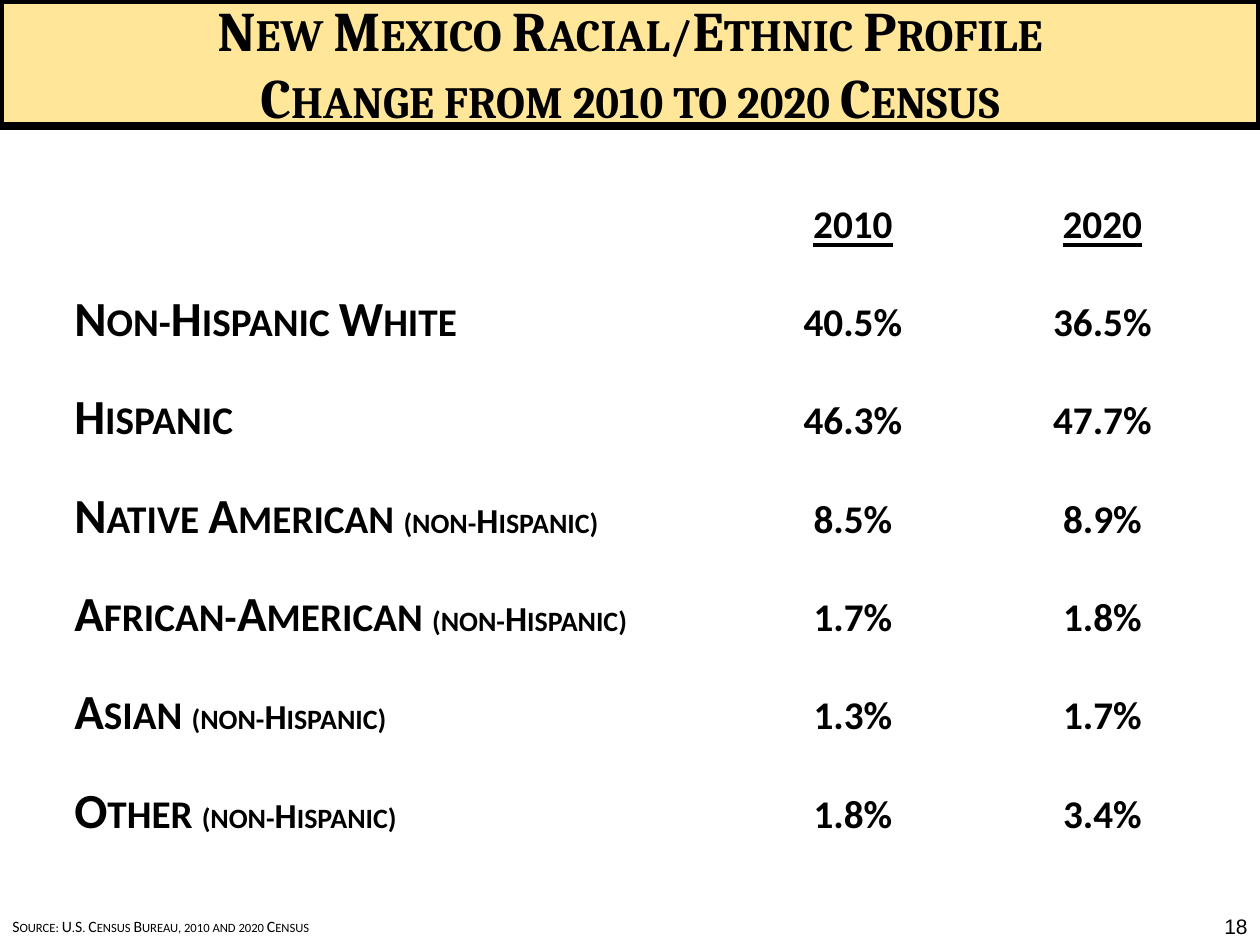
from dataclasses import dataclass

from pptx import Presentation
from pptx import util as u
from pptx.dml.color import RGBColor
from pptx.enum import text
from pptx.util import Inches


@dataclass(frozen=True)
class Theme:
    ink: RGBColor = RGBColor(0x00, 0x00, 0x00)
    banner: RGBColor = RGBColor(0xFF, 0xE6, 0x99)
    title_font: str = "Cambria"
    body_font: str = "Calibri"
    number_font: str = "Arial"
    title_size: float = 31.9
    body_size: float = 28
    note_size: float = 20
    number_size: float = 12
    source_size: float = 9
    border: float = 4.5


THEME = Theme()
LEFT, CENTER, RIGHT = (text.PP_ALIGN.LEFT, text.PP_ALIGN.CENTER,
                       text.PP_ALIGN.RIGHT)

TITLE = ["New Mexico Racial/Ethnic Profile", "Change from 2010 to 2020 Census"]
YEARS = ["2010", "2020"]
NOTE = "(non-Hispanic)"
# Group, whether it carries the note, share in each year
GROUPS = [
    ("Non-Hispanic White", False, "40.5%", "36.5%"),
    ("Hispanic", False, "46.3%", "47.7%"),
    ("Native American", True, "8.5%", "8.9%"),
    ("African-American", True, "1.7%", "1.8%"),
    ("Asian", True, "1.3%", "1.7%"),
    ("Other", True, "1.8%", "3.4%"),
]
SOURCE = "Source: U.S. Census Bureau, 2010 and 2020 Census"


def add_run(p, words, font, size, bold=False, underline=False, small_caps=True):
    r = p.add_run()
    r.text = words
    r.font.name = font
    r.font.size = u.Pt(size)
    r.font.bold = bold
    r.font.underline = underline
    r.font.color.rgb = THEME.ink
    if small_caps:
        r.font._element.set("cap", "small")


def add_title(slide, left, top, width, height):
    sp = slide.shapes.title
    sp.left, sp.top, sp.width, sp.height = left, top, width, height
    sp.fill.solid()
    sp.fill.fore_color.rgb = THEME.banner
    sp.line.color.rgb = THEME.ink
    sp.line.width = u.Pt(THEME.border)
    tf = sp.text_frame
    tf.auto_size = text.MSO_AUTO_SIZE.NONE
    tf.vertical_anchor = text.MSO_ANCHOR.MIDDLE
    for i, line in enumerate(TITLE):
        p = tf.add_paragraph() if i else tf.paragraphs[0]
        p.alignment = CENTER
        add_run(p, line, THEME.title_font, THEME.title_size, bold=True)


def fill_cell(cell, words, align, note="", underline=False):
    cell.margin_left = cell.margin_right = Inches(0.1)
    cell.margin_top = cell.margin_bottom = Inches(0.07)
    cell.vertical_anchor = text.MSO_ANCHOR.MIDDLE
    p = cell.text_frame.paragraphs[0]
    p.alignment = align
    add_run(p, words + " " if note else words, THEME.body_font,
            THEME.body_size, bold=True, underline=underline)
    if note:
        add_run(p, note, THEME.body_font, THEME.note_size, bold=True)


def add_profile_table(slide, left, top, width, height):
    rows, cols = len(GROUPS) + 1, len(YEARS) + 1
    table = slide.shapes.add_table(rows, cols, left, top, width, height).table
    table.first_row = table.horz_banding = False
    year_width = Inches(1.98)
    table.columns[0].width = width - year_width * len(YEARS)
    for c in range(1, cols):
        table.columns[c].width = year_width
    for cell in table.iter_cells():
        cell.fill.background()

    # Year headings
    for c, year in enumerate(YEARS, 1):
        fill_cell(table.cell(0, c), year, CENTER, underline=True)
    # One row for each group
    for row, (group, noted, *shares) in enumerate(GROUPS, 1):
        fill_cell(table.cell(row, 0), group, LEFT, NOTE if noted else "")
        for c, share in enumerate(shares, 1):
            fill_cell(table.cell(row, c), share, CENTER)


def add_footer_text(slide, left, top, width, height, words, font, size,
                    align=LEFT, anchor=text.MSO_ANCHOR.TOP, small_caps=True):
    tf = slide.shapes.add_textbox(left, top, width, height).text_frame
    tf.word_wrap = True
    tf.vertical_anchor = anchor
    p = tf.paragraphs[0]
    p.alignment = align
    add_run(p, words, font, size, small_caps=small_caps)


def main():
    prs = Presentation()
    prs.slide_width, prs.slide_height = Inches(10), Inches(7.5)
    slide = prs.slides.add_slide(prs.slide_layouts[5])

    add_title(slide, 0, 0, prs.slide_width, Inches(1))
    # Source line
    add_footer_text(slide, 0, Inches(7.23), Inches(6.99), Inches(0.27),
                    SOURCE, THEME.body_font, THEME.source_size)
    add_profile_table(slide, Inches(0.49), Inches(1.37),
                      Inches(9.25), Inches(5.46))
    # Page number
    add_footer_text(slide, Inches(7.92), Inches(7), Inches(2.08), Inches(0.5),
                    "18", THEME.number_font, THEME.number_size, RIGHT,
                    text.MSO_ANCHOR.BOTTOM, small_caps=False)
    prs.save("out.pptx")


if __name__ == "__main__":
    main()
